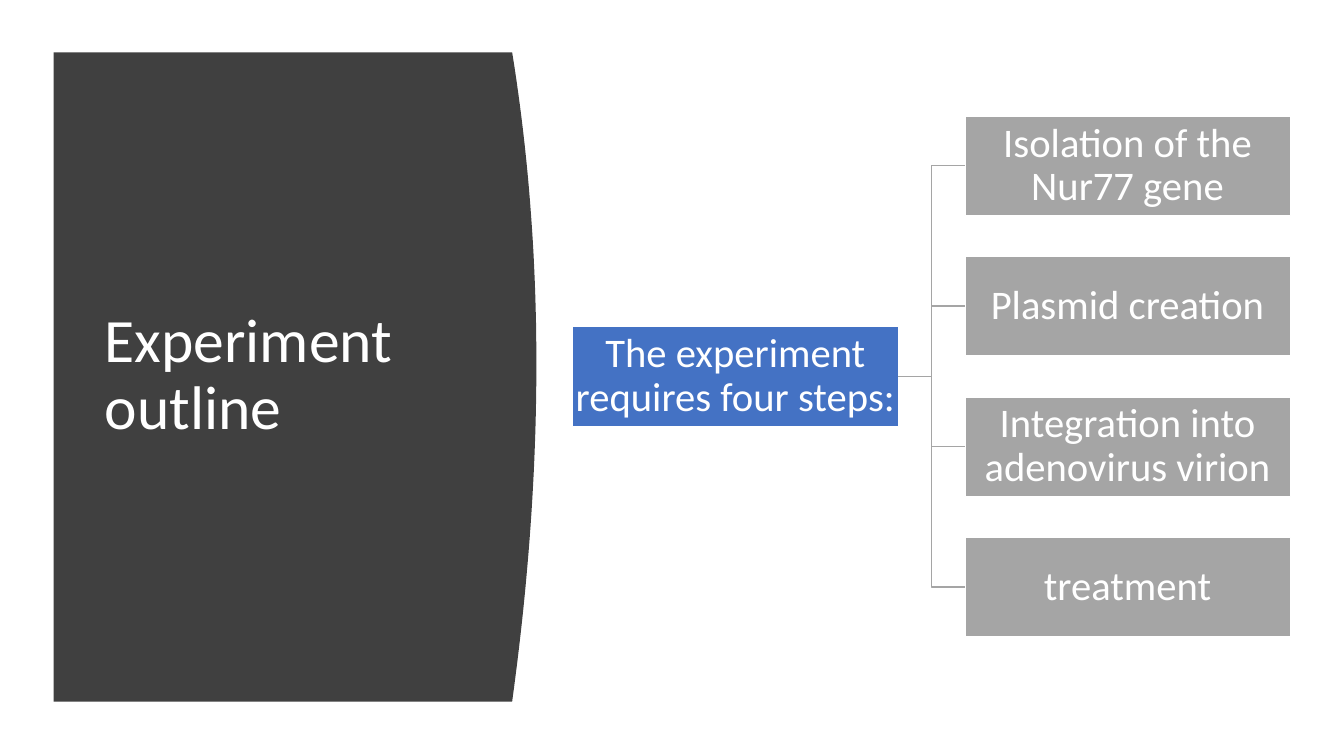
import dataclasses

import pptx
import pptx.dml.color
import pptx.enum.shapes
import pptx.enum.text
import pptx.oxml
import pptx.oxml.ns
import pptx.util

COLOURS = {"panel": "404040", "root": "4472C4", "step": "A5A5A5", "white": "FFFFFF"}
FONT = "Calibri"

deck = pptx.Presentation()
deck.slide_width = pptx.util.Inches(13.33)
deck.slide_height = pptx.util.Inches(7.5)
page = deck.slides.add_slide(deck.slide_layouts[6])


@dataclasses.dataclass(frozen=True)
class Node:
    text: str
    column: float
    row: float
    colour: str


def across(percent: float) -> int:
    return round(deck.slide_width * percent / 100)


def down(percent: float) -> int:
    return round(deck.slide_height * percent / 100)


def colour(name: str) -> pptx.dml.color.RGBColor:
    return pptx.dml.color.RGBColor.from_string(COLOURS[name])


def apply(target, values: dict) -> None:
    for name, value in values.items():
        setattr(target, name, value)


def write(box, text: str, size: float, alignment, frame_format: dict) -> None:
    frame = box.text_frame
    apply(frame, {
        "word_wrap": True,
        "vertical_anchor": pptx.enum.text.MSO_ANCHOR.MIDDLE,
        **frame_format,
    })
    para = frame.paragraphs[0]
    apply(para, {"alignment": alignment, "line_spacing": 0.9})
    span = para.add_run()
    span.text = text
    apply(span.font, {"name": FONT, "size": pptx.util.Pt(size)})
    span.font.color.rgb = colour("white")


def paint(shape, fill: str) -> None:
    shape.shadow.inherit = False
    shape.fill.solid()
    shape.fill.fore_color.rgb = colour(fill)


def draw_panel() -> None:
    left, right, top, height, bulge, steps = 4, 38.11, 6.93, 85.87, 1.8, 48
    edge = []
    for step in range(steps + 1):
        turn = 2 * step / steps - 1
        reach = bulge * (1 - turn ** 2) * (1 - 0.08 * turn)
        edge.append((across(right + reach), down(top + height * step / steps)))
    builder = page.shapes.build_freeform(across(left), down(top))
    builder.add_line_segments([*edge, (across(left), down(top + height))], close=True)
    panel = builder.convert_to_shape()
    paint(panel, "panel")
    panel.line.fill.background()


def draw_title(text: str) -> None:
    box = page.shapes.add_textbox(across(7.05), down(14.8), across(28.06), down(69.87))
    write(box, text, 44, pptx.enum.text.PP_ALIGN.LEFT, {})


def draw_node(node: Node):
    box = page.shapes.add_shape(
        pptx.enum.shapes.MSO_SHAPE.RECTANGLE,
        across(42.61 + 29.18 * node.column), down(15.33 + 18.58 * node.row),
        across(24.23), down(13.2),
    )
    paint(box, node.colour)
    box.line.color.rgb = colour("white")
    box.line.width = pptx.util.Pt(1)
    inset = pptx.util.Inches(0.02)
    margins = {f"margin_{side}": inset for side in ("left", "top", "right", "bottom")}
    write(box, node.text, 29, pptx.enum.text.PP_ALIGN.CENTER, margins)
    return box


def draw_branch(parent, child) -> None:
    branch = page.shapes.add_connector(pptx.enum.shapes.MSO_CONNECTOR.ELBOW, 0, 0, 0, 0)
    branch.begin_connect(parent, 3)
    branch.end_connect(child, 1)
    branch.line.color.rgb = colour("step")
    branch.line.width = pptx.util.Pt(1)
    properties = branch._element.spPr
    properties.append(pptx.oxml.parse_xml(
        f'<a:effectLst {pptx.oxml.ns.nsdecls("a")}/>'
    ))


def main() -> None:
    steps = (
        "Isolation of the Nur77 gene",
        "Plasmid creation",
        "Integration into adenovirus virion",
        "treatment",
    )
    draw_panel()
    draw_title("Experiment outline")
    middle = (len(steps) - 1) / 2
    root = draw_node(Node("The experiment requires four steps:", 0, middle, "root"))
    for row, text in enumerate(steps):
        draw_branch(root, draw_node(Node(text, 1, row, "step")))
    deck.save("out.pptx")


if __name__ == "__main__":
    main()
